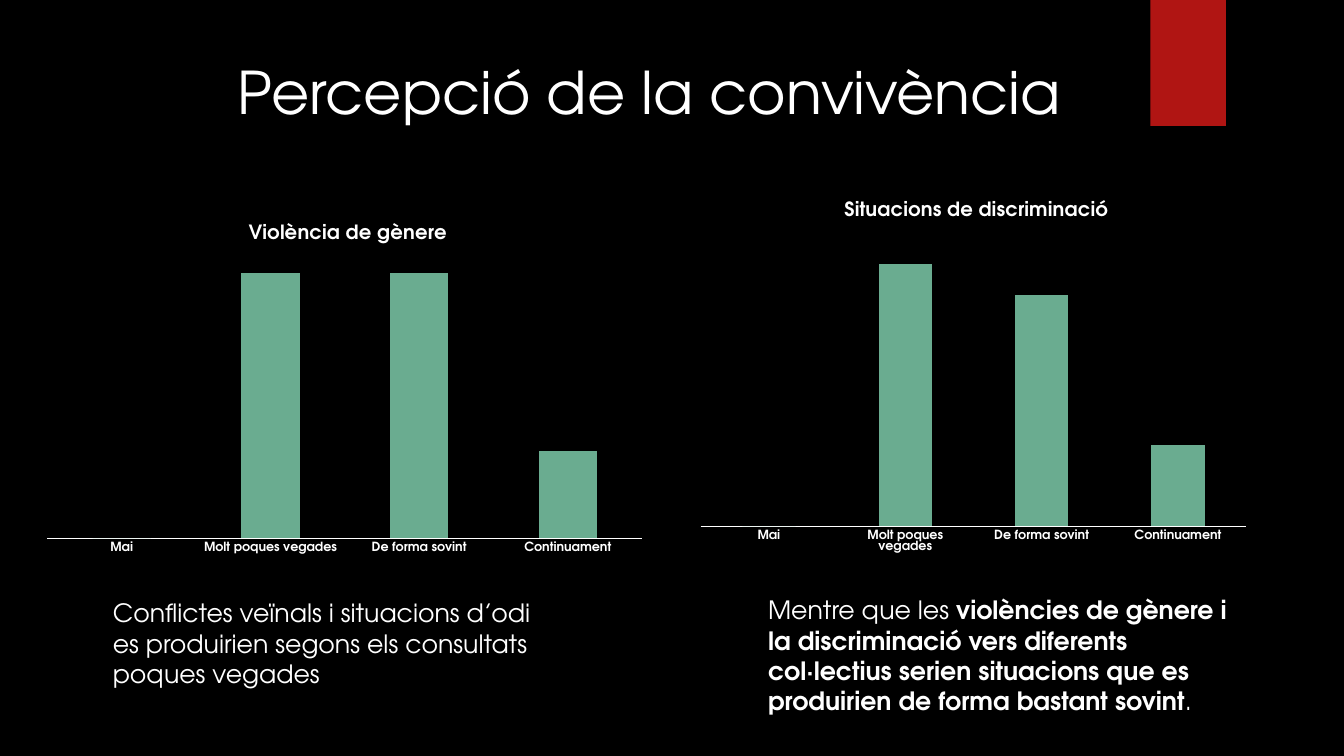
from lxml import etree
from pptx import Presentation
from pptx.chart.data import CategoryChartData
from pptx.dml.color import RGBColor
from pptx.enum.chart import XL_CHART_TYPE, XL_TICK_MARK
from pptx.enum.shapes import MSO_SHAPE
from pptx.enum.text import MSO_ANCHOR, PP_ALIGN
from pptx.oxml import parse_xml
from pptx.oxml.ns import nsdecls, qn
from pptx.util import Pt

PX = 9144  # EMU per pixel at 100 pixels to the inch
FONT = "TeX Gyre Adventor"
BLACK = RGBColor(0x00, 0x00, 0x00)
WHITE = RGBColor(0xFF, 0xFF, 0xFF)
RED = RGBColor(0xB0, 0x15, 0x13)
GREEN = RGBColor(0x6A, 0xAC, 0x90)

FREQUENCIES = ["Mai", "Molt poques vegades", "De forma sovint", "Continuament"]


def box(*lengths):
    return [length * PX for length in lengths]


def style_font(font, size, bold=False):
    font.name = FONT
    font.size = Pt(size)
    font.bold = bold
    font.color.rgb = WHITE


def add_run(paragraph, text, size, bold=False):
    run = paragraph.add_run()
    run.text = text
    style_font(run.font, size, bold)


def set_title(slide, text):
    title = slide.shapes.title
    title.left, title.top, title.width, title.height = box(80, 50, 982, 103)
    title.text_frame.vertical_anchor = MSO_ANCHOR.TOP
    paragraph = title.text_frame.paragraphs[0]
    paragraph.alignment = PP_ALIGN.RIGHT
    add_run(paragraph, text, 42)


def add_ribbon(slide):
    ribbon = slide.shapes.add_shape(MSO_SHAPE.RECTANGLE, *box(1141, 0, 75, 125))
    ribbon.shadow.inherit = False
    ribbon.fill.solid()
    ribbon.fill.fore_color.rgb = RED
    ribbon.line.fill.background()


def place(parent, successor, frame, area, inner=False):
    """Fix a chart part at a place given in slide pixels."""
    left, top, width, height = frame
    values = {"x": (area[0] - left) / width, "y": (area[1] - top) / height}
    if inner:
        values.update(w=area[2] / width, h=area[3] / height)
    layout = parse_xml(f"<c:layout {nsdecls('c')}><c:manualLayout/></c:layout>")
    manual = layout[0]
    if inner:
        etree.SubElement(manual, qn("c:layoutTarget")).set("val", "inner")
    for key in ("x", "y"):
        etree.SubElement(manual, qn(f"c:{key}Mode")).set("val", "edge")
    for key, value in values.items():
        etree.SubElement(manual, qn(f"c:{key}")).set("val", f"{value:.4f}")
    for old in parent.findall(qn("c:layout")):
        parent.remove(old)
    parent.find(qn(successor)).addprevious(layout)


def add_column_chart(slide, frame, title, title_spot, plot, values):
    data = CategoryChartData()
    data.categories = FREQUENCIES
    data.add_series("Series 1", values)
    chart = slide.shapes.add_chart(
        XL_CHART_TYPE.COLUMN_CLUSTERED, *box(*frame), data).chart
    style_font(chart.font, 10)
    chart.has_legend = False

    # Title
    chart.has_title = True
    add_run(chart.chart_title.text_frame.paragraphs[0], title, 14, True)
    chart.chart_title.include_in_layout = False
    place(chart.chart_title._element, "c:overlay", frame, title_spot)

    # Axes
    category_axis = chart.category_axis
    category_axis.major_tick_mark = XL_TICK_MARK.NONE
    category_axis.minor_tick_mark = XL_TICK_MARK.NONE
    style_font(category_axis.tick_labels.font, 9, True)
    category_axis.format.line.color.rgb = WHITE
    category_axis.format.line.width = Pt(0.75)
    value_axis = chart.value_axis
    value_axis.visible = False
    value_axis.has_major_gridlines = False
    value_axis.minimum_scale = 0
    value_axis.maximum_scale = 100

    # Columns
    columns = chart.plots[0]
    columns.gap_width = 156
    columns.overlap = -27
    columns.vary_by_categories = False
    fill = columns.series[0].format.fill
    fill.solid()
    fill.fore_color.rgb = GREEN
    plot_area = chart._chartSpace.chart.plotArea
    place(plot_area, "c:barChart", frame, plot, inner=True)


def add_comment(slide, frame, runs):
    text_frame = slide.shapes.add_textbox(*box(*frame)).text_frame
    text_frame.word_wrap = True
    for text, bold in runs:
        add_run(text_frame.paragraphs[0], text, 18, bold)


def main():
    presentation = Presentation()
    presentation.slide_width, presentation.slide_height = box(1333, 750)
    slide = presentation.slides.add_slide(presentation.slide_layouts[5])
    slide.background.fill.solid()
    slide.background.fill.fore_color.rgb = BLACK

    # Heading
    set_title(slide, "Percepció de la convivència")
    add_ribbon(slide)

    # Charts
    add_column_chart(slide, (34, 204, 616, 353), "Violència de gènere",
                     (243, 217), (47, 271, 590, 263), [0, 100, 100, 33])
    add_column_chart(slide, (683, 181, 564, 376), "Situacions de discriminació",
                     (834, 194), (695, 262, 541, 260), [0, 100, 88, 31])

    # Comments
    add_comment(slide, (102, 588, 455, 101), [
        ("Conflictes veïnals i situacions d’odi es produirien segons "
         "els consultats poques vegades", False)])
    add_comment(slide, (752, 585, 496, 131), [
        ("Mentre que les ", False),
        ("violències de gènere i la discriminació vers diferents col·lectius "
         "serien situacions que es produirien de forma bastant sovint", True),
        (".", False)])

    presentation.save("out.pptx")


if __name__ == "__main__":
    main()
